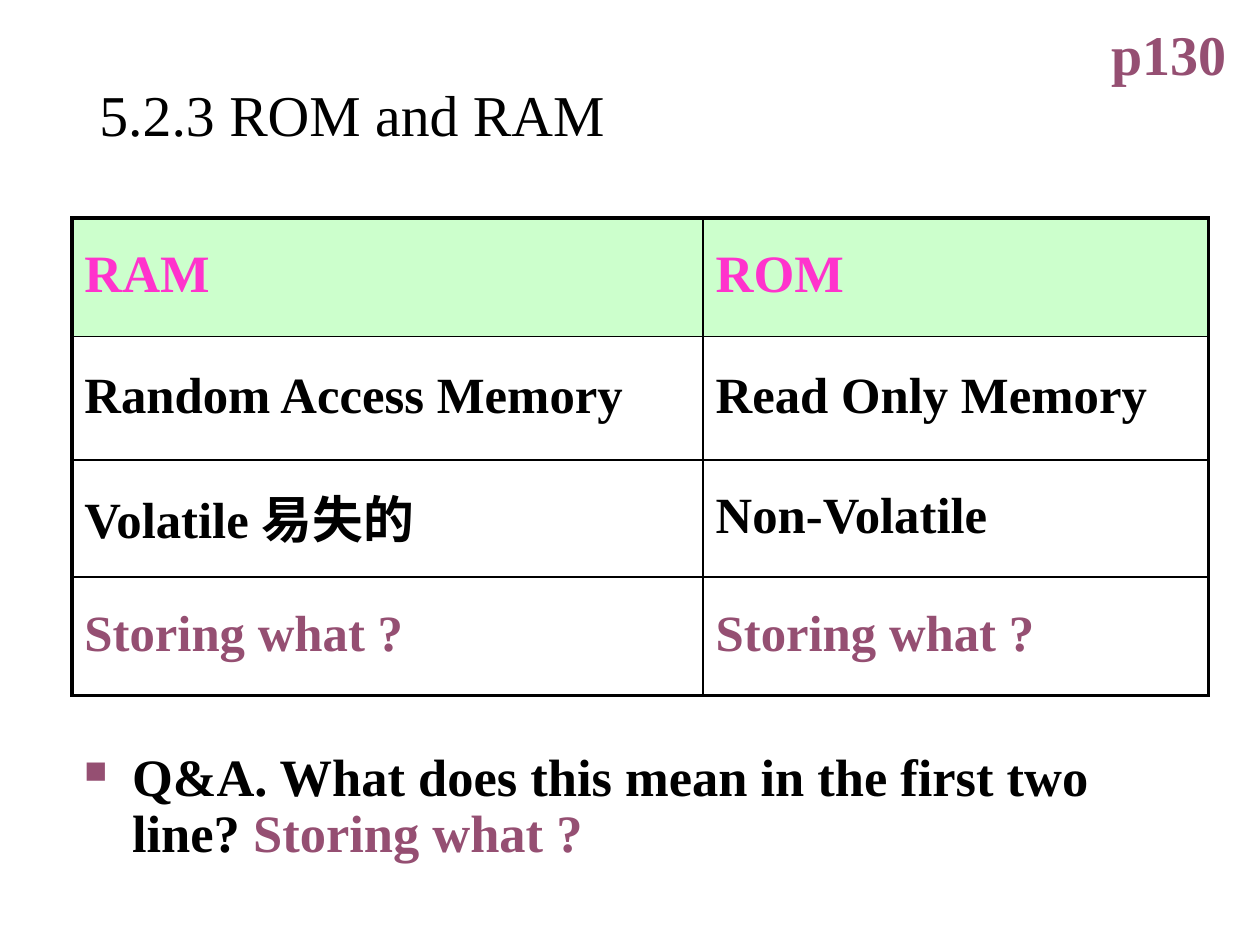
from pptx import Presentation
from pptx.dml.color import RGBColor
from pptx.enum.text import MSO_ANCHOR as Anchor, MSO_AUTO_SIZE as AutoSize
from pptx.oxml.ns import qn
from pptx.util import Inches, Pt
from lxml.etree import SubElement

FONT = "Times New Roman"
BLACK = RGBColor(0x00, 0x00, 0x00)
PINK = RGBColor(0xFF, 0x33, 0xCC)
PLUM = RGBColor(0x95, 0x4F, 0x72)
MINT = RGBColor(0xCC, 0xFF, 0xCC)

COLUMNS = (5.01, 4.01)
ROWS = (0.94, 0.98, 0.93, 0.94)
CELLS = (
    ("RAM", "ROM"),
    ("Random Access Memory", "Read Only Memory"),
    ("Volatile 易失的", "Non-Volatile"),
    ("Storing what ?", "Storing what ?"),
)
ROW_STYLES = ((30, PINK), (29, BLACK), (29, BLACK), (29, PLUM))
THIN, THICK = 1, 2.25


def add_run(para, text, size, color, bold=True):
    span = para.add_run()
    span.text = text
    span.font.name = FONT
    span.font.size = Pt(size)
    span.font.bold = bold
    span.font.color.rgb = color


def set_indent(para, margin, first):
    props = para._p.get_or_add_pPr()
    props.set("marL", str(Inches(margin)))
    props.set("indent", str(Inches(first)))
    return props


def add_box(page, area, anchor=Anchor.TOP, wrap=True):
    frame = page.shapes.add_textbox(*map(Inches, area)).text_frame
    frame.word_wrap = wrap
    frame.vertical_anchor = anchor
    return frame


def add_title(page, area):
    para = add_box(page, area, Anchor.MIDDLE).paragraphs[0]
    set_indent(para, 0.75, -0.75)
    para.line_spacing = 0.9
    add_run(para, "5.2.3 ROM and RAM", 33, BLACK, bold=False)


def add_page_mark(page, area):
    frame = add_box(page, area, wrap=False)
    frame.auto_size = AutoSize.SHAPE_TO_FIT_TEXT
    para = frame.paragraphs[0]
    set_indent(para, 1.08, -0.58)
    add_run(para, "p130", 32, PLUM)


def set_borders(cell, widths):
    props = cell._tc.get_or_add_tcPr()
    for side, width in widths.items():
        line = SubElement(props, qn(f"a:ln{side}"), w=str(Pt(width)))
        fill = SubElement(line, qn("a:solidFill"))
        SubElement(fill, qn("a:srgbClr"), val=str(BLACK))


def fill_cell(cell, row, column):
    last_row, last_column = len(ROWS) - 1, len(COLUMNS) - 1
    set_borders(cell, {
        "L": THICK if column == 0 else THIN,
        "R": THICK if column == last_column else THIN,
        "T": THICK if row == 0 else THIN,
        "B": THICK if row == last_row else THIN,
    })
    if row == 0:
        cell.fill.solid()
        cell.fill.fore_color.rgb = MINT
    else:
        cell.fill.background()
    cell.vertical_anchor = Anchor.MIDDLE
    para = cell.text_frame.paragraphs[0]
    if row > 0:
        set_indent(para, 0.54, -0.54)
    para.line_spacing = 0.9
    add_run(para, CELLS[row][column], *ROW_STYLES[row])


def add_memory_table(page, left, top):
    area = map(Inches, (left, top, sum(COLUMNS), sum(ROWS)))
    table = page.shapes.add_table(len(ROWS), len(COLUMNS), *area).table
    table.first_row = False
    table.horz_banding = False
    for column, width in enumerate(COLUMNS):
        table.columns[column].width = Inches(width)
    for row, height in enumerate(ROWS):
        table.rows[row].height = Inches(height)
        for column in range(len(COLUMNS)):
            fill_cell(table.cell(row, column), row, column)


def add_question(page, area):
    para = add_box(page, area).paragraphs[0]
    para.line_spacing = 0.9
    props = set_indent(para, 0.38, -0.38)
    bullet_color = SubElement(props, qn("a:buClr"))
    SubElement(bullet_color, qn("a:srgbClr"), val=str(PLUM))
    SubElement(props, qn("a:buSzPct"), val="60000")
    SubElement(props, qn("a:buChar"), char="■")
    add_run(para, "Q&A. What does this mean in the first two line? ", 30, BLACK)
    add_run(para, "Storing what ?", 30, PLUM)


def main():
    deck = Presentation()
    deck.slide_width, deck.slide_height = Inches(10), Inches(7.5)
    page = deck.slides.add_slide(deck.slide_layouts[6])
    add_title(page, (0.69, 0.4, 8.62, 1.07))
    add_memory_table(page, 0.57, 1.73)
    add_question(page, (0.57, 5.91, 9.12, 1.08))
    add_page_mark(page, (8.22, 0.11, 1.63, 0.64))
    deck.save("out.pptx")


if __name__ == "__main__":
    main()
